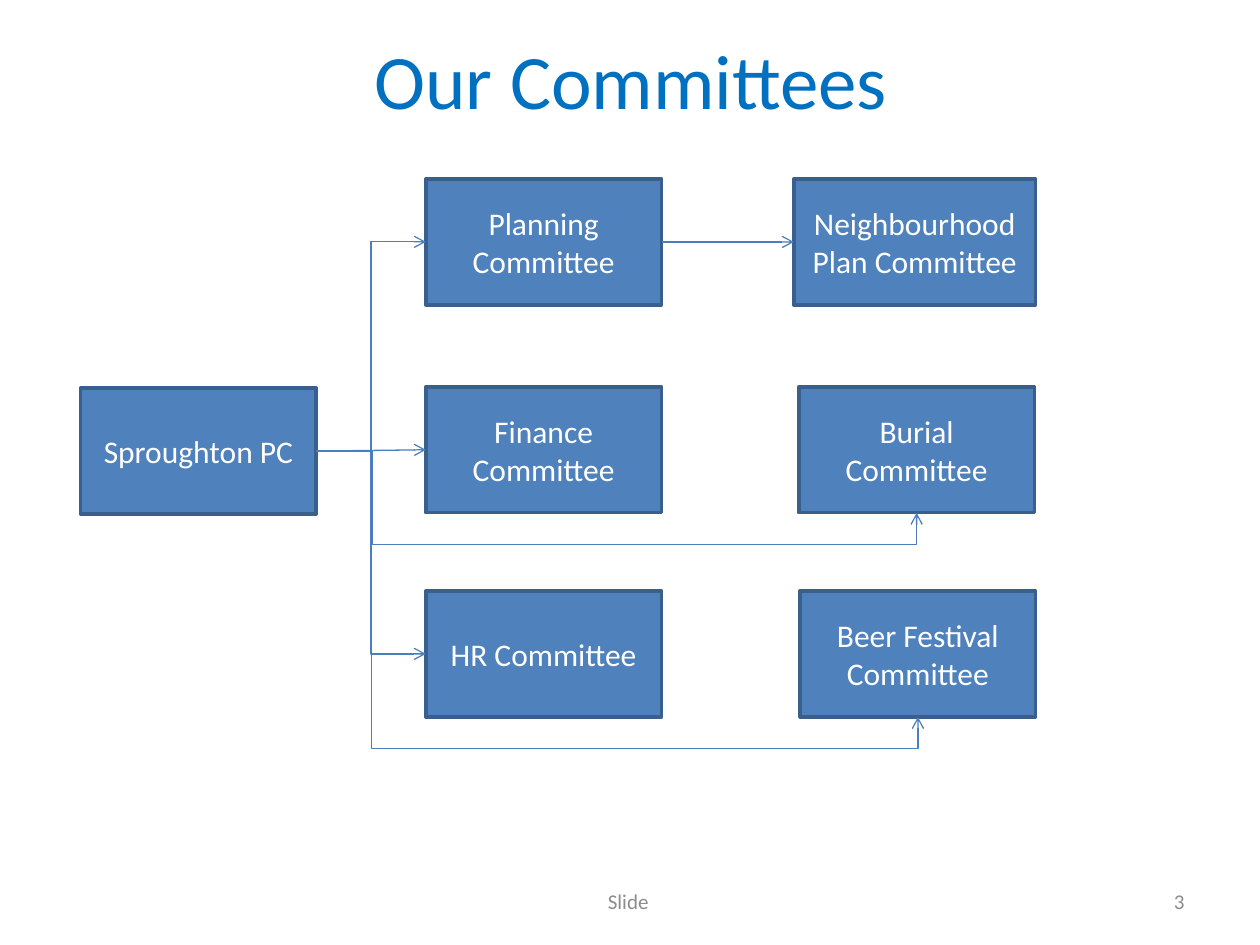
import pptx
import pptx.dml.color
import pptx.enum.shapes
import pptx.enum.text
import pptx.oxml
import pptx.oxml.ns
import pptx.util
from pptx.util import Inches

COLORS = {
    "title": "0070C0",
    "box": "4F81BD",
    "border": "3A5F8C",
    "arrow": "4B7EBC",
    "box_text": "FFFFFF",
    "footer": "8C8C8C",
}
ALIGN = pptx.enum.text.PP_ALIGN
CONNECTOR = pptx.enum.shapes.MSO_CONNECTOR
TOP, LEFT, BOTTOM, RIGHT = range(4)  # connection sites of a rectangle
BOX_W, BOX_H = 1.87, 1
COL_2, COL_3 = 3.38, 6.34
ROW_1, ROW_2, ROW_3 = 1.42, 3.07, 4.69
DROP = 0.25  # how far a detour runs below its target

BOXES = {
    "Sproughton PC": (0.64, 3.08, BOX_W),
    "Neighbourhood Plan Committee": (6.3, ROW_1, 1.92),
    "Burial Committee": (COL_3, ROW_2, BOX_W),
    "HR Committee": (COL_2, ROW_3, BOX_W),
    "Finance Committee": (COL_2, ROW_2, BOX_W),
    "Planning Committee": (COL_2, ROW_1, BOX_W),
    "Beer Festival Committee": (6.35, ROW_3, BOX_W),
}


def rgb(name):
    return pptx.dml.color.RGBColor.from_string(COLORS[name])


def set_text(sp, text, size=18, color="box_text", align=ALIGN.CENTER):
    tf = sp.text_frame
    tf.word_wrap = True
    tf.vertical_anchor = pptx.enum.text.MSO_ANCHOR.MIDDLE
    p = tf.paragraphs[0]
    p.alignment = align
    r = p.add_run()
    r.text = text
    r.font.name = "Calibri"
    r.font.size = pptx.util.Pt(size)
    r.font.color.rgb = rgb(color)


def add_title(s, text):
    sp = s.shapes.title
    sp.left, sp.top = Inches(0.51), Inches(0)
    sp.width, sp.height = Inches(9), Inches(1.25)
    set_text(sp, text, size=44, color="title")


def add_footer(s, text, left, width, align):
    sp = s.shapes.add_textbox(Inches(left), Inches(6.95), Inches(width), Inches(0.4))
    set_text(sp, text, size=12, color="footer", align=align)


def add_box(s, text, left, top, width):
    sp = s.shapes.add_shape(
        pptx.enum.shapes.MSO_SHAPE.RECTANGLE,
        Inches(left), Inches(top), Inches(width), Inches(BOX_H))
    sp.shadow.inherit = False
    sp.fill.solid()
    sp.fill.fore_color.rgb = rgb("box")
    sp.line.color.rgb = rgb("border")
    sp.line.width = pptx.util.Pt(2)
    set_text(sp, text)
    return sp


def add_arrow(s, start, end, kind=CONNECTOR.ELBOW, site=LEFT):
    cxn = s.shapes.add_connector(kind, 0, 0, 0, 0)
    cxn.begin_connect(start, RIGHT)
    cxn.end_connect(end, site)
    cxn.line.color.rgb = rgb("arrow")
    cxn.line.width = pptx.util.Pt(0.75)
    ln = cxn.line._get_or_add_ln()
    pptx.oxml.ns.qn("a:tailEnd")
    tail = ln.makeelement(pptx.oxml.ns.qn("a:tailEnd"), {"type": "arrow"})
    ln.append(tail)
    sp_pr = cxn._element.spPr
    sp_pr.append(sp_pr.makeelement(pptx.oxml.ns.qn("a:effectLst"), {}))
    return cxn


def add_detour(s, start, end, bend):
    """Arrow that turns down after bend inches and enters the target from below."""
    cxn = add_arrow(s, start, end, site=BOTTOM)
    geom = cxn._element.spPr.find(pptx.oxml.ns.qn("a:prstGeom"))
    geom.set("prst", "bentConnector4")
    guides = geom.get_or_add_avLst()
    ratios = (Inches(bend) / cxn.width, 1 + Inches(DROP) / cxn.height)
    for i, ratio in enumerate(ratios, start=1):
        guides.append(guides.makeelement(
            pptx.oxml.ns.qn("a:gd"),
            {"name": f"adj{i}", "fmla": f"val {round(ratio * 100000)}"}))


def main():
    prs = pptx.Presentation()
    prs.slide_width, prs.slide_height = Inches(10), Inches(7.5)
    s = prs.slides.add_slide(prs.slide_layouts.get_by_name("Title Only"))
    add_title(s, "Our Committees")
    add_footer(s, "3", 7.17, 2.33, ALIGN.RIGHT)
    add_footer(s, "Slide ", 3.42, 3.17, ALIGN.CENTER)

    boxes = {text: add_box(s, text, *place) for text, place in BOXES.items()}
    council = boxes["Sproughton PC"]
    planning = boxes["Planning Committee"]
    add_arrow(s, council, planning)
    add_arrow(s, council, boxes["HR Committee"])
    add_arrow(s, council, boxes["Finance Committee"], kind=CONNECTOR.STRAIGHT)
    add_arrow(s, planning, boxes["Neighbourhood Plan Committee"])
    add_detour(s, council, boxes["Burial Committee"], bend=0.45)
    add_detour(s, council, boxes["Beer Festival Committee"], bend=0.44)
    prs.save("out.pptx")


if __name__ == "__main__":
    main()
